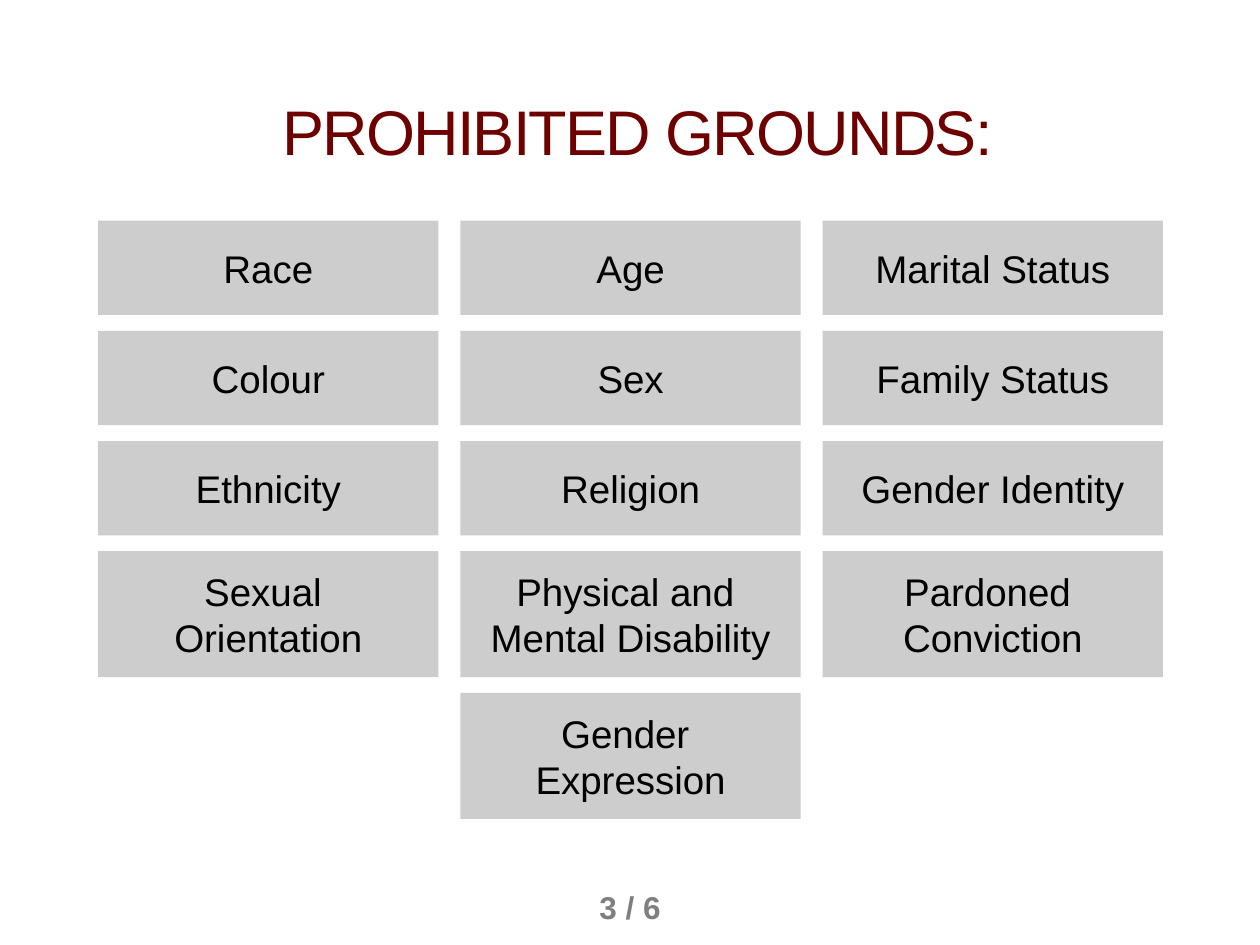
from pptx import Presentation
from pptx.dml.color import RGBColor
from pptx.enum.shapes import MSO_SHAPE as Shape
from pptx.enum.text import MSO_ANCHOR as Anchor, PP_ALIGN as Align
from pptx.util import Inches, Pt

TITLE = "PROHIBITED GROUNDS:"
PAGE_NUMBER = "3 / 6"
# Rows of the grid: height in inches, then the left, middle and right grounds.
ROWS = [
    (0.75, ["Race", "Age", "Marital Status"]),
    (0.75, ["Colour", "Sex", "Family Status"]),
    (0.75, ["Ethnicity", "Religion", "Gender Identity"]),
    (1, ["Sexual \vOrientation", "Physical and \vMental Disability",
         "Pardoned \vConviction"]),
    (1, [None, "Gender \vExpression", None]),
]

MAROON = RGBColor(0x6E, 0x00, 0x00)
GREY = RGBColor(0x7F, 0x7F, 0x7F)
LIGHT_GREY = RGBColor(0xCD, 0xCD, 0xCD)
BLACK = RGBColor(0, 0, 0)

GRID_LEFT, GRID_TOP = 0.78, 1.75
BOX_WIDTH, COLUMN_GAP, ROW_GAP = 2.7, 0.175, 0.125


def write(shape, text, size, color, anchor, wrap=True, bold=False):
    frame = shape.text_frame
    frame.text = text
    frame.word_wrap = wrap
    frame.vertical_anchor = anchor
    para = frame.paragraphs[0]
    para.alignment = Align.CENTER
    for span in para.runs:
        font = span.font
        font.name, font.size, font.bold = "Arial", Pt(size), bold
        font.color.rgb = color
    return para


def add_ground(page, text, left, top, height):
    box = page.shapes.add_shape(Shape.RECTANGLE, Inches(left), Inches(top),
                                Inches(BOX_WIDTH), Inches(height))
    box.shadow.inherit = False
    box.fill.solid()
    box.fill.fore_color.rgb = LIGHT_GREY
    box.line.fill.background()
    write(box, text, 22, BLACK, Anchor.MIDDLE, wrap=False)


def main():
    deck = Presentation()
    deck.slide_width, deck.slide_height = Inches(10), Inches(7.5)
    page = deck.slides.add_slide(deck.slide_layouts[5])

    title = page.shapes.title
    title.left, title.top = Inches(0.5), Inches(0.76)
    title.width, title.height = Inches(9.12), Inches(0.62)
    para = write(title, TITLE, 36, MAROON, Anchor.BOTTOM)
    para.line_spacing = 0.8
    para.runs[0].font._element.set("spc", "-100")

    top = GRID_TOP
    for height, grounds in ROWS:
        for column, ground in enumerate(grounds):
            if ground:
                left = GRID_LEFT + column * (BOX_WIDTH + COLUMN_GAP)
                add_ground(page, ground, left, top, height)
        top += height + ROW_GAP

    number = page.shapes.add_textbox(Inches(4.5), Inches(7), Inches(1), Inches(0.4))
    write(number, PAGE_NUMBER, 18, GREY, Anchor.TOP, bold=True)

    deck.save("out.pptx")


if __name__ == "__main__":
    main()
